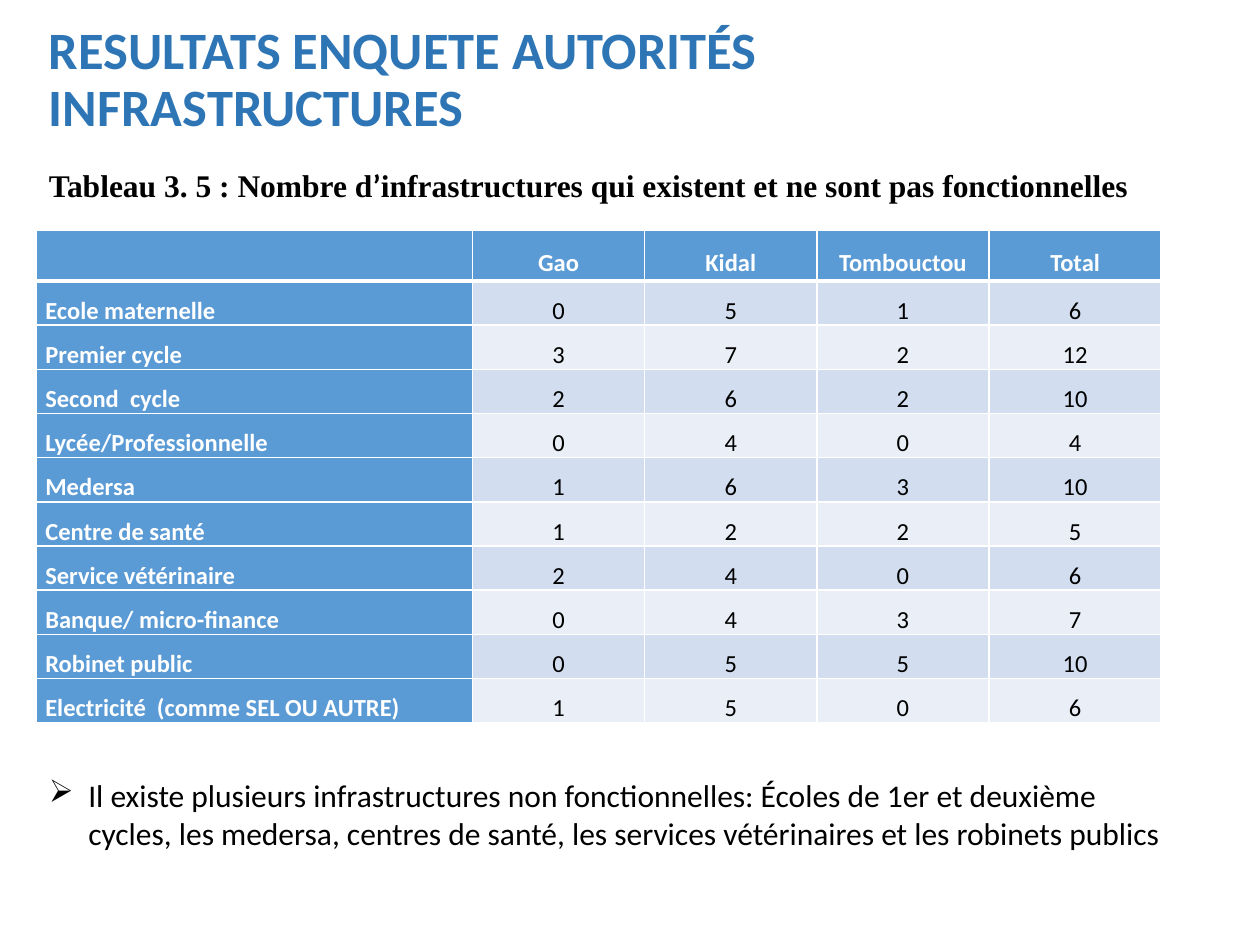
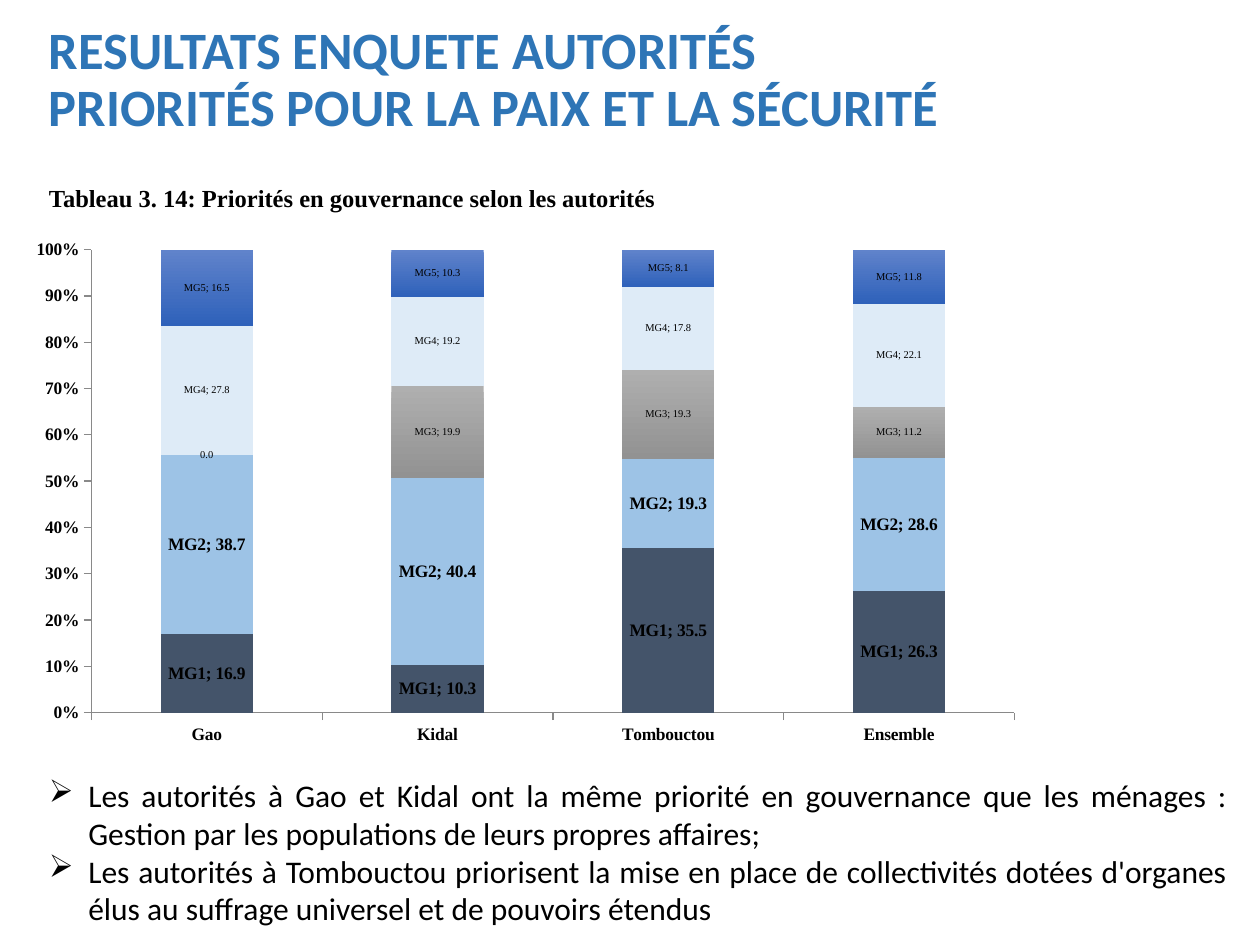
from lxml import etree
from pptx import Presentation
from pptx.chart.data import CategoryChartData
from pptx.dml.color import RGBColor
from pptx.enum.chart import XL_CHART_TYPE, XL_TICK_MARK
from pptx.enum.text import MSO_ANCHOR, PP_ALIGN
from pptx.oxml import parse_xml
from pptx.oxml.ns import nsdecls, qn
from pptx.util import Pt

STACKED_100 = XL_CHART_TYPE.COLUMN_STACKED_100
TICK_OUT = XL_TICK_MARK.OUTSIDE
TOP, MIDDLE = MSO_ANCHOR.TOP, MSO_ANCHOR.MIDDLE
LEFT, CENTER, JUSTIFY = PP_ALIGN.LEFT, PP_ALIGN.CENTER, PP_ALIGN.JUSTIFY

SANS, SERIF = "Calibri", "Times New Roman"
BLACK, WHITE, TITLE_BLUE = "000000", "FFFFFF", "2E75B6"
HEADER_BLUE, BAND_DARK, BAND_LIGHT = "5B9BD5", "D2DEEF", "EAEFF7"
AXIS_GREY = "898989"
MARGIN = 20.9
COMMENT_TOP = 439.9

color = RGBColor.from_string


def write(paragraph, text, size=18, font=SANS, fill=BLACK, bold=False,
          align=LEFT, spacing=None, bullet=None):
    """Append text to a paragraph; a newline becomes a line break."""
    for i, line in enumerate(text.split("\n")):
        if i:
            paragraph.add_line_break()
        run = paragraph.add_run()
        run.text = line
        run.font.size = Pt(size)
        run.font.name = font
        run.font.bold = bold
        run.font.color.rgb = color(fill)
    paragraph.alignment = align
    if spacing:
        paragraph.line_spacing = spacing
    if bullet:
        props = paragraph._p.get_or_add_pPr()
        props.set("marL", str(Pt(22.5)))
        props.set("indent", str(Pt(-22.5)))
        etree.SubElement(props, qn("a:buChar")).set("char", bullet)


def add_frame(slide, top, width, height, anchor=MIDDLE):
    box = slide.shapes.add_textbox(Pt(MARGIN), Pt(top), Pt(width), Pt(height))
    box.text_frame.word_wrap = True
    box.text_frame.vertical_anchor = anchor
    return box.text_frame


prs = Presentation()
prs.slide_width, prs.slide_height = Pt(720), Pt(540)

# Slides with their shared title and comment
pages = [
    ("INFRASTRUCTURES", 659.5, LEFT, [
        "Il existe plusieurs infrastructures non fonctionnelles: Écoles de 1er et "
        "deuxième cycles, les medersa, centres de santé, les services vétérinaires "
        "et les robinets publics"]),
    ("PRIORITÉS POUR LA PAIX ET LA SÉCURITÉ", 687.6, JUSTIFY, [
        "Les autorités à Gao et Kidal ont la même priorité en gouvernance que les "
        "ménages : Gestion par les populations de leurs propres affaires;",
        "Les autorités à Tombouctou priorisent la mise en place de collectivités "
        "dotées d'organes élus au suffrage universel et de pouvoirs étendus"]),
]
for topic, comment_width, align, comments in pages:
    slide = prs.slides.add_slide(prs.slide_layouts[6])
    title = add_frame(slide, 15.8, 678.2, 61.2)
    write(title.paragraphs[0], f"RESULTATS ENQUETE AUTORITÉS\n{topic}",
          size=30, fill=TITLE_BLUE, bold=True, spacing=0.9)
    comment_frame = add_frame(slide, COMMENT_TOP, comment_width, 47 * len(comments), TOP)
    for i, comment in enumerate(comments):
        paragraph = comment_frame.add_paragraph() if i else comment_frame.paragraphs[0]
        write(paragraph, comment, align=align, bullet="➢")

infrastructure_slide, priorities_slide = prs.slides

# Slide 1: infrastructure table
caption = add_frame(infrastructure_slide, 91.4, 643, 28.8).paragraphs[0]
for text, font in [
    ("Tableau 3. 5 : Nombre d", SERIF),
    ("’", SANS),
    ("infrastructures qui existent et ne sont pas fonctionnelles", SERIF),
]:
    write(caption, text, font=font, bold=True)

infrastructure_rows = [
    ("", "Gao", "Kidal", "Tombouctou", "Total"),
    ("Ecole maternelle", 0, 5, 1, 6),
    ("Premier cycle", 3, 7, 2, 12),
    ("Second  cycle", 2, 6, 2, 10),
    ("Lycée/Professionnelle", 0, 4, 0, 4),
    ("Medersa", 1, 6, 3, 10),
    ("Centre de santé", 1, 2, 2, 5),
    ("Service vétérinaire", 2, 4, 0, 6),
    ("Banque/ micro-finance", 0, 4, 3, 7),
    ("Robinet public", 0, 5, 5, 10),
    ("Electricité  (comme SEL OU AUTRE)", 1, 5, 0, 6),
]
column_widths = [249.1] + [98.4] * 4
row_heights = [28.8] + [25.2] * 10
table = infrastructure_slide.shapes.add_table(
    len(row_heights), len(column_widths), Pt(MARGIN), Pt(131.8),
    Pt(sum(column_widths)), Pt(sum(row_heights))).table
for column, width in zip(table.columns, column_widths):
    column.width = Pt(width)

for r, values in enumerate(infrastructure_rows):
    table.rows[r].height = Pt(row_heights[r])
    for c, value in enumerate(values):
        cell = table.cell(r, c)
        is_heading = r == 0 or c == 0
        band = BAND_DARK if r % 2 else BAND_LIGHT
        cell.fill.solid()
        cell.fill.fore_color.rgb = color(HEADER_BLUE if is_heading else band)
        cell.vertical_anchor = MIDDLE
        cell.margin_left = cell.margin_right = Pt(5)
        cell.margin_top = cell.margin_bottom = 0
        write(cell.text_frame.paragraphs[0], str(value), size=14, bold=is_heading,
              fill=WHITE if is_heading else BLACK,
              align=CENTER if c else LEFT, spacing=1.5)
        borders = {"lnL": 1, "lnR": 1, "lnT": 3 if r == 1 else 1, "lnB": 1 if r else 3}
        for i, (side, weight) in enumerate(borders.items()):
            cell._tc.get_or_add_tcPr().insert(i, parse_xml(
                f'<a:{side} {nsdecls("a")} w="{Pt(weight)}"><a:solidFill>'
                f'<a:srgbClr val="{WHITE}"/></a:solidFill></a:{side}>'))

# Slide 2: governance priorities chart
write(add_frame(priorities_slide, 100.8, 499, 24.5).paragraphs[0],
      "Tableau 3. 14: Priorités en gouvernance selon les autorités",
      size=14, font=SERIF, bold=True)

# name, values, fill from top to bottom, label size
priorities = [
    ("MG1", (16.9, 10.3, 35.5, 26.3), ["44546A"], 10),
    ("MG2", (38.7, 40.4, 19.3, 28.6), ["9DC3E6"], 10),
    ("MG3", (0, 19.9, 19.3, 11.2), ["AFAFAF", "929292"], 6),
    ("MG4", (27.8, 19.2, 17.8, 22.1), ["DEEBF7"], 6),
    ("MG5", (16.5, 10.3, 8.1, 11.8), ["6083CB", "2E61BA"], 6),
]
chart_data = CategoryChartData(number_format="0.0")
chart_data.categories = ["Gao", "Kidal", "Tombouctou", "Ensemble"]
for name, values, _, _ in priorities:
    chart_data.add_series(name, values)
chart = priorities_slide.shapes.add_chart(
    STACKED_100, Pt(MARGIN), Pt(124.6), Pt(576), Pt(301), chart_data).chart
chart.has_legend = False
chart.has_title = False
chart.font.name = SERIF
chart.font.size = Pt(6)
chart.font.color.rgb = color(BLACK)

plot = chart.plots[0]
plot.gap_width, plot.overlap = 150, 100
plot.vary_by_categories = False
for series, (_, _, fills, label_size) in zip(plot.series, priorities):
    fill = series.format.fill
    if len(fills) == 1:
        fill.solid()
        fill.fore_color.rgb = color(fills[0])
    else:
        fill.gradient()
        fill.gradient_angle = 270
        for stop, shade in zip(fill.gradient_stops, fills):
            stop.color.rgb = color(shade)
    labels = series.data_labels
    labels.show_value = labels.show_series_name = True
    labels.number_format = "0.0"
    labels.number_format_is_linked = False
    labels.font.size = Pt(label_size)
    labels.font.bold = label_size == 10
    labels.font.name = SERIF
    labels.font.color.rgb = color(BLACK)
    separator = parse_xml(f'<c:separator {nsdecls("c")}>; </c:separator>')
    labels._element.find(qn("c:showBubbleSize")).addnext(separator)

# The empty MG3 bar of Gao shows its value only
empty_label = plot.series[2].points[0].data_label.font
empty_label.size = Pt(6)
empty_label.name = SERIF

for axis in (chart.category_axis, chart.value_axis):
    axis.has_major_gridlines = False
    axis.major_tick_mark = TICK_OUT
    axis.format.line.color.rgb = color(AXIS_GREY)
    axis.tick_labels.font.size = Pt(10)
    axis.tick_labels.font.bold = True
chart.value_axis.tick_labels.number_format = "0%"
chart.value_axis.tick_labels.number_format_is_linked = False

plot_area = chart._chartSpace.find(".//" + qn("c:plotArea"))
for automatic_layout in plot_area.findall(qn("c:layout")):
    plot_area.remove(automatic_layout)
plot_area.insert(0, parse_xml(
    f'<c:layout {nsdecls("c")}><c:manualLayout><c:layoutTarget val="inner"/>'
    '<c:xMode val="edge"/><c:yMode val="edge"/><c:x val="0.05"/><c:y val="0.06"/>'
    '<c:w val="0.92"/><c:h val="0.88"/></c:manualLayout></c:layout>'))

prs.save("out.pptx")
